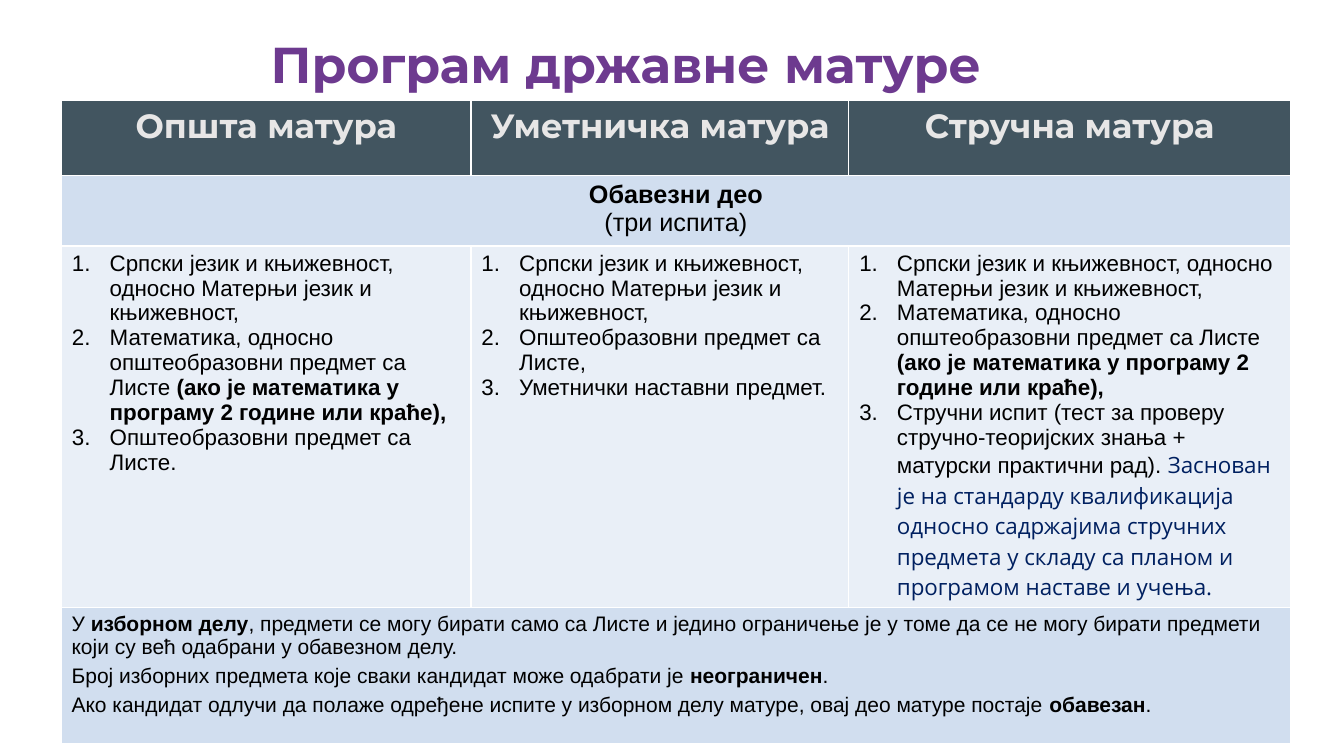
import pptx
import pptx.dml.color
import pptx.enum.text
import pptx.oxml
import pptx.oxml.ns
import pptx.util

Cm, Pt = pptx.util.Cm, pptx.util.Pt
CENTER = pptx.enum.text.PP_ALIGN.CENTER
MIDDLE = pptx.enum.text.MSO_ANCHOR.MIDDLE

COLORS = {
    "title": "6D3A8F", "header": "425560", "header_text": "E7E6E6",
    "band": "D1DEEF", "body": "E9EFF7", "text": "000000", "accent": "002060",
}
FONTS = {
    "title": {"name": "Montserrat", "size": Pt(36), "bold": True, "color": "title"},
    "header": {"name": "Montserrat", "size": Pt(24), "bold": True, "color": "header_text"},
    "section": {"name": "Arial", "size": Pt(18), "bold": False, "color": "text"},
    "exam": {"name": "Arial", "size": Pt(16), "bold": False, "color": "text"},
    "accent": {"name": "Open Sans", "size": Pt(16), "bold": False, "color": "accent"},
    "note": {"name": "Arial", "size": Pt(15), "bold": False, "color": "text"},
}

# Wording: ** switches bold on and off, a tuple gives (style, text)
TITLE = "Програм државне матуре"
HEADERS = ["Општа матура", "Уметничка матура", "Стручна матура"]
LANGUAGE = "Српски језик и књижевност, односно Матерњи језик и књижевност,"
MATHEMATICS = ("Математика, односно општеобразовни предмет са Листе "
               "**(ако је математика у програму 2 године или краће),**")
EXAMS = [
    [[LANGUAGE], [MATHEMATICS], ["Општеобразовни предмет са Листе."]],
    [[LANGUAGE], ["Општеобразовни предмет са Листе,"], ["Уметнички наставни предмет."]],
    [[LANGUAGE], [MATHEMATICS],
     ["Стручни испит (тест за проверу стручно-теоријских знања + матурски практични рад). ",
      ("accent", "Заснован је на стандарду квалификација односно садржајима стручних "
                 "предмета у складу са планом и програмом наставе и учења.")]],
]
NOTES = [
    ["У **изборном делу**, предмети се могу бирати само са Листе и једино ограничење је у томе "
     "да се не могу бирати предмети који су већ одабрани у обавезном делу."],
    ["Број изборних предмета које сваки кандидат може одабрати је **неограничен**."],
    ["Ако кандидат одлучи да полаже одређене испите у изборном делу матуре, "
     "овај део матуре постаје **обавезан**."],
]


def set_attributes(target, values):
    for name, value in values.items():
        setattr(target, name, value)


def rgb(color):
    return pptx.dml.color.RGBColor.from_string(COLORS[color])


class SlideBuilder:
    def __init__(self, slide):
        self.slide = slide

    def add_run(self, paragraph, text, style, bold=False):
        run = paragraph.add_run()
        run.text = text
        values = dict(FONTS[style])
        run.font.color.rgb = rgb(values.pop("color"))
        set_attributes(run.font, values)
        if bold:
            run.font.bold = True

    def add_paragraphs(self, frame, paragraphs, style, formats=None, numbered=False):
        for index, pieces in enumerate(paragraphs):
            paragraph = frame.paragraphs[0] if index == 0 else frame.add_paragraph()
            set_attributes(paragraph, formats or {})
            if numbered:
                self.number(paragraph)
            for piece in pieces:
                run_style, text = piece if isinstance(piece, tuple) else (style, piece)
                for line_index, line in enumerate(text.split("\n")):
                    if line_index:
                        paragraph.add_line_break()
                    for part_index, part in enumerate(line.split("**")):
                        if part:
                            self.add_run(paragraph, part, run_style, part_index % 2 == 1)

    def number(self, paragraph):
        properties = paragraph._p.get_or_add_pPr()
        properties.set("marL", str(Cm(0.96)))
        properties.set("indent", str(-Cm(0.95)))
        namespace = pptx.oxml.ns.nsdecls("a")
        for xml in (
            f'<a:buClr {namespace}><a:srgbClr val="{COLORS["text"]}"/></a:buClr>',
            f'<a:buFont {namespace} typeface="+mj-lt"/>',
            f'<a:buAutoNum {namespace} type="arabicPeriod"/>',
        ):
            properties.append(pptx.oxml.parse_xml(xml))

    def add_text(self, box, text, style, formats):
        frame = self.slide.shapes.add_textbox(*map(Cm, box)).text_frame
        set_attributes(frame, {"word_wrap": True, "vertical_anchor": MIDDLE})
        self.add_paragraphs(frame, [[text]], style, formats)

    def add_table(self, left, top, widths, heights):
        table = self.slide.shapes.add_table(
            len(heights), len(widths), Cm(left), Cm(top),
            Cm(sum(widths)), Cm(sum(heights))).table
        table.horz_banding = False
        for column, width in zip(table.columns, widths):
            column.width = Cm(width)
        for row, height in zip(table.rows, heights):
            row.height = Cm(height)
        return table

    def fill_cell(self, cell, color, paragraphs, style, formats=None, numbered=False):
        cell.fill.solid()
        cell.fill.fore_color.rgb = rgb(color)
        self.add_paragraphs(cell.text_frame, paragraphs, style, formats, numbered)


def main():
    presentation = pptx.Presentation()
    set_attributes(presentation, {"slide_width": Cm(33.87), "slide_height": Cm(19.05)})
    slide = presentation.slides.add_slide(presentation.slide_layouts[6])
    builder = SlideBuilder(slide)
    centered = {"alignment": CENTER}

    # Title
    builder.add_text((1.17, 0.23, 29.21, 2.92), TITLE, "title",
                     {"alignment": CENTER, "line_spacing": 0.9})

    # Table with one column for each kind of exam
    table = builder.add_table(1.55, 2.54, [10.32, 9.52, 11.13], [1.88, 1.75, 9.1, 3.45])
    for column, (header, exams) in enumerate(zip(HEADERS, EXAMS)):
        builder.fill_cell(table.cell(0, column), "header", [[header]], "header", centered)
        builder.fill_cell(table.cell(2, column), "body", exams, "exam", numbered=True)

    # Rows across the full width
    for row in (1, 3):
        table.cell(row, 0).merge(table.cell(row, 2))
    builder.fill_cell(table.cell(1, 0), "band", [["**Обавезни део**\n(три испита)"]],
                      "section", centered)
    notes = table.cell(3, 0)
    builder.fill_cell(notes, "band", NOTES, "note", {"space_after": Pt(4)})
    notes.text_frame.paragraphs[0].space_before = Pt(6)

    presentation.save("out.pptx")


if __name__ == "__main__":
    main()
